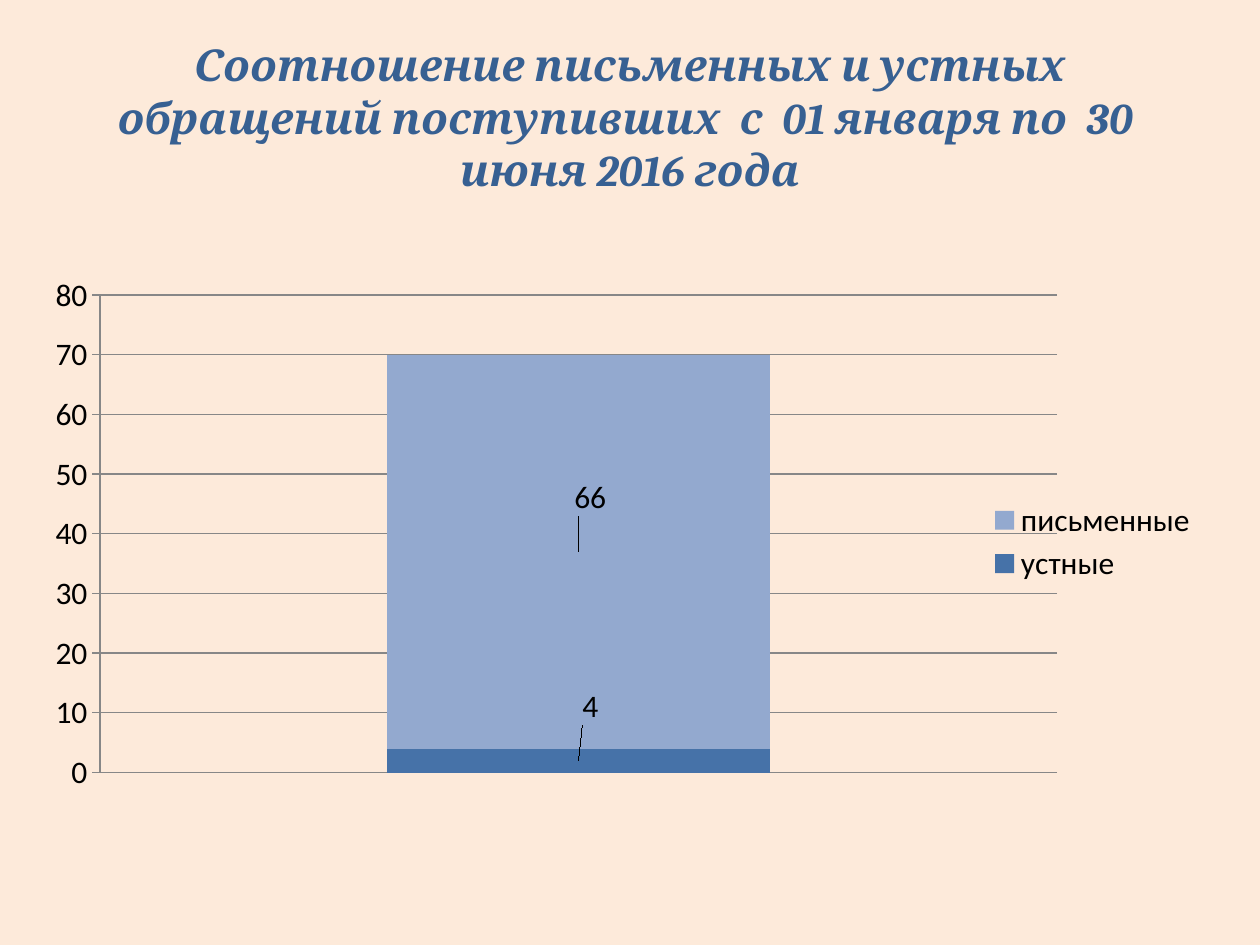
from lxml.etree import SubElement
from pptx import Presentation
from pptx.chart.data import CategoryChartData
from pptx.dml.color import RGBColor
from pptx.enum.chart import XL_CHART_TYPE, XL_LEGEND_POSITION, XL_TICK_MARK
from pptx.enum.text import MSO_ANCHOR, PP_ALIGN
from pptx.oxml.ns import qn
from pptx.util import Inches, Pt

TITLE = ("Соотношение письменных и устных обращений поступивших"
         "  с  01 января по  30  июня 2016 года")
CATEGORIES = ["1"]
# name, values, colour, label shift as a fraction of the chart size
SERIES = [
    ("устные", [4], "4672A8", {"x": 0.01, "y": -0.1}),
    ("письменные", [66], "93A9CF", {"x": 0.01, "y": -0.1}),
]
PLOT_AREA = {"layoutTarget": "inner", "xMode": "edge", "yMode": "edge",
             "x": 0.06, "y": 0.03, "w": 0.81, "h": 0.88}
LEGEND_AREA = {"xMode": "edge", "yMode": "edge",
               "x": 0.81, "y": 0.4, "w": 0.18, "h": 0.17}
BACKGROUND = "FDEADA"
GRID_COLOR = "878787"


def color(hex_value):
    return RGBColor.from_string(hex_value)


def style_font(font, name, size, hex_value):
    font.name = name
    font.size = Pt(size)
    font.color.rgb = color(hex_value)


def set_layout(element, values, position):
    """Give a chart element a manual layout as its child at that position."""
    for old_layout in element.findall(qn("c:layout")):
        element.remove(old_layout)
    layout = SubElement(element, qn("c:layout"))
    manual = SubElement(layout, qn("c:manualLayout"))
    for tag, value in values.items():
        SubElement(manual, qn(f"c:{tag}")).set("val", str(value))
    element.insert(position, layout)


def add_title(slide):
    title = slide.shapes.title
    title.left, title.top = Inches(0.5), Inches(0.3)
    title.width, title.height = Inches(9), Inches(1.25)
    title.text_frame.text = TITLE
    title.text_frame.word_wrap = True
    title.text_frame.vertical_anchor = MSO_ANCHOR.MIDDLE
    paragraph = title.text_frame.paragraphs[0]
    paragraph.alignment = PP_ALIGN.CENTER
    font = paragraph.runs[0].font
    style_font(font, "Cambria", 25, "376092")
    font.bold = font.italic = True


def add_requests_chart(slide):
    data = CategoryChartData()
    data.categories = CATEGORIES
    for name, values, _, _ in SERIES:
        data.add_series(name, values)
    chart = slide.shapes.add_chart(
        XL_CHART_TYPE.COLUMN_STACKED, Inches(0.23), Inches(2.19),
        Inches(9.38), Inches(4.33), data).chart
    chart.has_title = False
    style_font(chart.font, "Calibri", 18, "000000")

    chart.category_axis.visible = False
    value_axis = chart.value_axis
    value_axis.minimum_scale, value_axis.maximum_scale = 0, 80
    value_axis.major_unit = 10
    value_axis.major_tick_mark = XL_TICK_MARK.OUTSIDE
    value_axis.has_major_gridlines = True
    for line in (value_axis.format.line, value_axis.major_gridlines.format.line):
        line.color.rgb = color(GRID_COLOR)
        line.width = Pt(0.75)

    plot = chart.plots[0]
    plot.gap_width, plot.overlap = 150, 100
    plot.vary_by_categories = False
    for series, (_, _, fill, shift) in zip(plot.series, SERIES):
        series.format.fill.solid()
        series.format.fill.fore_color.rgb = color(fill)
        series.data_labels.show_value = True
        style_font(series.points[0].data_label.font, "Calibri", 18, "000000")
        label = series.data_labels._element.find(qn("c:dLbl"))
        set_layout(label, shift, 1)

    chart.has_legend = True
    legend = chart.legend
    legend.position = XL_LEGEND_POSITION.RIGHT
    legend.include_in_layout = False
    set_layout(legend._element, LEGEND_AREA, 1)
    set_layout(chart._chartSpace.chart.plotArea, PLOT_AREA, 0)


def main():
    presentation = Presentation()
    presentation.slide_width, presentation.slide_height = Inches(10), Inches(7.5)
    slide = presentation.slides.add_slide(presentation.slide_layouts[5])
    slide.background.fill.solid()
    slide.background.fill.fore_color.rgb = color(BACKGROUND)
    add_title(slide)
    add_requests_chart(slide)
    presentation.save("out.pptx")


if __name__ == "__main__":
    main()
